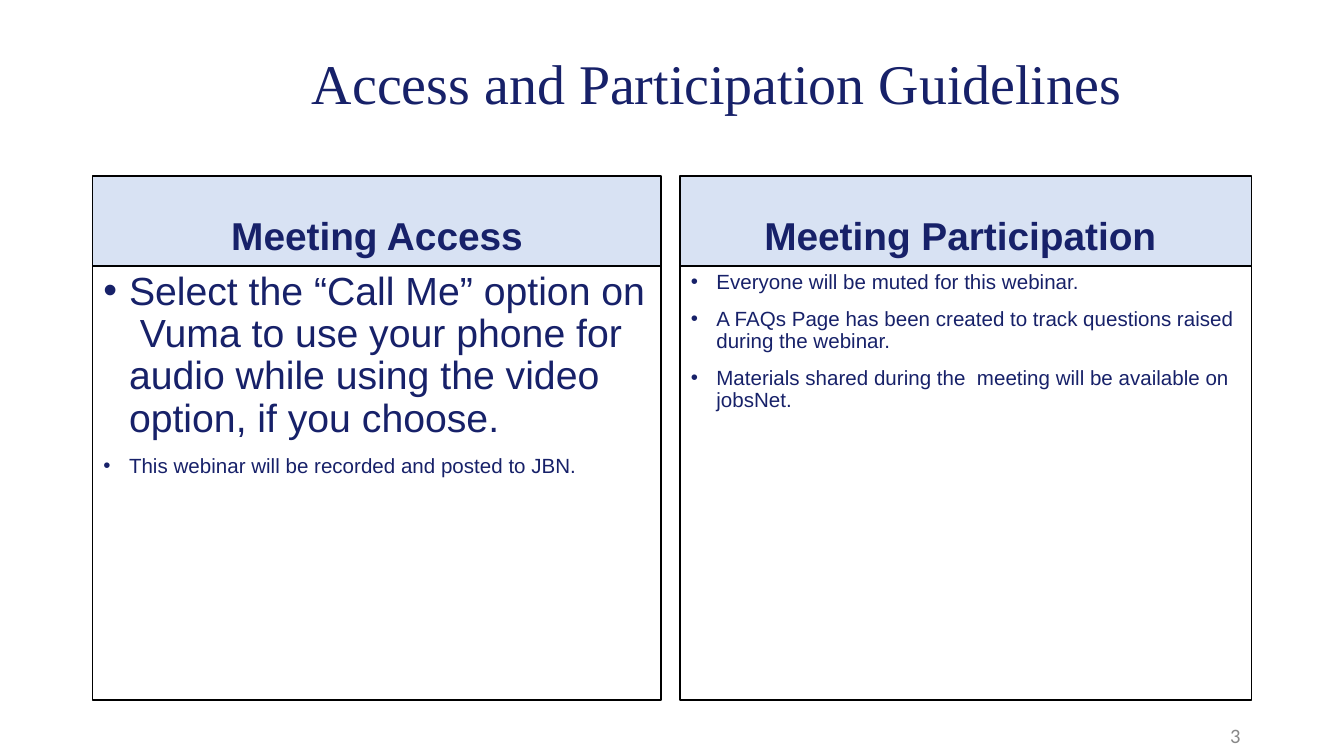
from pptx import Presentation
from pptx.dml.color import RGBColor
from pptx.enum.shapes import MSO_SHAPE as Shape
from pptx.enum.text import MSO_ANCHOR as Anchor, PP_ALIGN as Align
from pptx.oxml import parse_xml
from pptx.oxml.ns import nsdecls
from pptx.util import Inches, Pt

COLORS = {"navy": "172169", "header": "D8E2F3", "border": "000000", "number": "888888"}
HEADER_TOP, HEADER_HEIGHT = 1.31, 0.67
BODY_TOP, BODY_HEIGHT = HEADER_TOP + HEADER_HEIGHT, 3.23
COLUMNS = [
    (0.69, 4.23, "Meeting Access", [
        ("Select the “Call Me” option on  Vuma to use your phone for audio "
         "while using the video option, if you choose.", 21),
        ("This webinar will be recorded and posted to JBN.", 11),
    ]),
    (5.06, 4.25, "Meeting Participation ", [
        ("Everyone will be muted for this webinar.", 11),
        ("A FAQs Page has been created to track questions raised during the webinar.", 11),
        ("Materials shared during the  meeting will be available on  jobsNet.", 11),
    ]),
]


def color(name):
    return RGBColor.from_string(COLORS[name])


def set_frame(frame, anchor, bottom=0.04):
    frame.word_wrap = True
    frame.vertical_anchor = anchor
    frame.margin_left = frame.margin_right = Inches(0.08)
    frame.margin_top, frame.margin_bottom = Inches(0.04), Inches(bottom)


def set_para(para, align, spacing, before=0):
    para.alignment, para.line_spacing = align, spacing
    para.space_before = Pt(before)


def add_span(para, text, size, font="Arial", tint="navy", bold=False):
    span = para.add_run()
    span.text = text
    span.font.size, span.font.name, span.font.bold = Pt(size), font, bold
    span.font.color.rgb = color(tint)


def add_label(page, area, text, size, font, tint, align, spacing):
    box = page.shapes.add_textbox(*map(Inches, area))
    set_frame(box.text_frame, Anchor.MIDDLE)
    para = box.text_frame.paragraphs[0]
    set_para(para, align, spacing)
    add_span(para, text, size, font, tint)


def add_panel(page, area, anchor, fill=None, bottom=0.04):
    panel = page.shapes.add_shape(Shape.RECTANGLE, *map(Inches, area))
    panel.shadow.inherit = False
    if fill:
        panel.fill.solid()
        panel.fill.fore_color.rgb = color(fill)
    else:
        panel.fill.background()
    panel.line.color.rgb = color("border")
    panel.line.width = Pt(0.75)
    set_frame(panel.text_frame, anchor, bottom)
    return panel.text_frame


def add_bullet(para):
    props = para._p.get_or_add_pPr()
    props.set("marL", str(Inches(0.19)))
    props.set("indent", str(-Inches(0.19)))
    for xml in (
        f'<a:buClr {nsdecls("a")}><a:srgbClr val="{COLORS["navy"]}"/></a:buClr>',
        f'<a:buFont {nsdecls("a")} typeface="Arial"/>',
        f'<a:buChar {nsdecls("a")} char="•"/>',
    ):
        props.append(parse_xml(xml))


def add_column(page, left, width, heading, items):
    header = add_panel(page, (left, HEADER_TOP, width, HEADER_HEIGHT),
                       Anchor.BOTTOM, "header", 0.07)
    para = header.paragraphs[0]
    set_para(para, Align.CENTER, 0.7)
    add_span(para, heading, 20.8, bold=True)

    body = add_panel(page, (left, BODY_TOP, width, BODY_HEIGHT), Anchor.TOP)
    for index, (text, size) in enumerate(items):
        para = body.add_paragraph() if index else body.paragraphs[0]
        set_para(para, Align.LEFT, 0.9, 8 if index else 0)
        add_bullet(para)
        add_span(para, text, size)


def main():
    deck = Presentation()
    deck.slide_width = Inches(10)
    deck.slide_height = Inches(10 * 9 / 16)
    page = deck.slides.add_slide(deck.slide_layouts[6])
    add_label(page, (2.21, 0.41, 6.25, 0.46), "Access and Participation Guidelines ",
              30, "Times New Roman", "navy", Align.CENTER, 0.9)
    for column in COLUMNS:
        add_column(page, *column)
    add_label(page, (7.06, 5.32, 2.25, 0.3), "3", 11, "Calibri", "number", Align.RIGHT, 1.0)
    deck.save("out.pptx")


if __name__ == "__main__":
    main()
